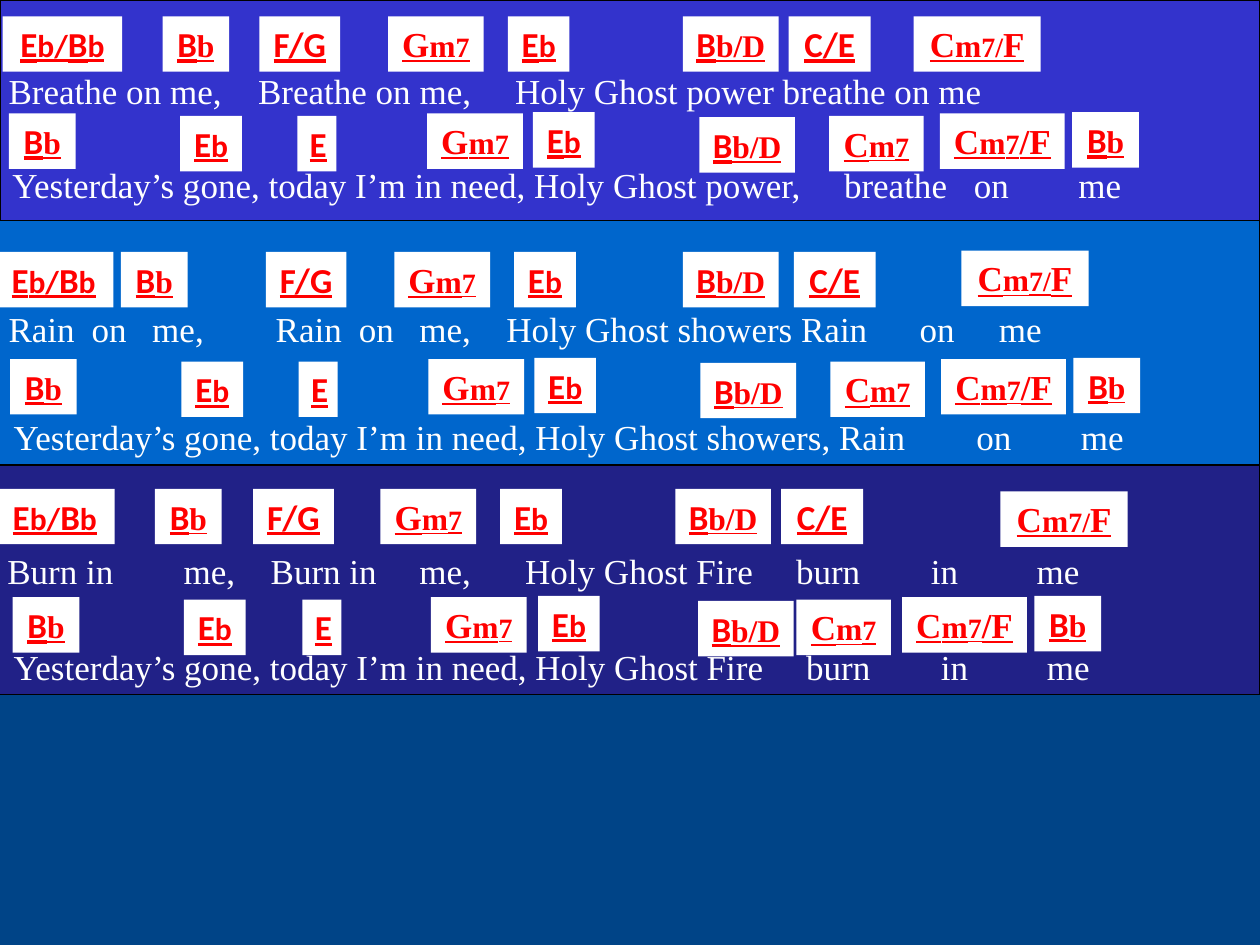
from lxml.etree import SubElement
from pptx import Presentation
from pptx.dml.color import RGBColor
from pptx.enum.shapes import MSO_SHAPE
from pptx.enum.text import MSO_ANCHOR, MSO_AUTO_SIZE, PP_ALIGN
from pptx.oxml.ns import qn
from pptx.util import Inches, Pt

COLS, ROWS = 1000, 750
SANS, SERIF = "Calibri", "Times New Roman"
HUES = {
    "light": "0066CC", "dark": "004487",
    "breathe": "3333CC", "rain": "0066CC", "burn": "212187",
    "edge": "000000", "lyric": "FFFFFF", "card": "FFFFFF", "chord": "FF0000",
}
MINOR = [("C", 20, SERIF), ("m", 18, SERIF)]
CHORDS = {
    "Eb/Bb": (95, [("E", 20, SANS), ("b/", 18, SANS), ("B", 20, SANS), ("b", 18, SANS)]),
    "Bb": (53, [("B", 20, SANS), ("b", 18, SERIF)]),
    "F/G": (64, [("F/G", 20, SANS)]),
    "Gm7": (76, [("G", 20, SERIF), ("m", 18, SERIF), ("7", 16, SERIF)]),
    "Eb": (49, [("E", 20, SANS), ("b", 18, SANS)]),
    "E": (31, [("E", 20, SANS)]),
    "Bb/D": (76, [("B", 20, SANS), ("b/D", 18, SERIF)]),
    "C/E": (65, [("C/E", 20, SANS)]),
    "Cm7": (75, MINOR + [("7", 16, SERIF)]),
    "Cm7/F high": (101, MINOR + [("7/", 16, SERIF), ("F", 20, SERIF)]),
    "Cm7/F low": (99, MINOR + [("7", 16, SERIF), ("/F", 20, SERIF)]),
}
HIGH = ["Eb/Bb", "Bb", "F/G", "Gm7", "Eb", "Bb/D", "C/E", "Cm7/F high"]
LOW = ["Bb", "Eb", "E", "Gm7", "Eb", "Bb/D", "Cm7", "Cm7/F low", "Bb"]
DROPS = [0, 2, 2, 0, -1, 3, 2, 0, -1]

BANDS = [("burn", -3, 369, 1003, 182), ("rain", -3, 175, 1003, 194), ("breathe", 0, 0, 1000, 175)]
LYRICS = [
    (-3, 50, 1000, "Breathe on me,\tBreathe on me,\tHoly Ghost power breathe on me", [205, 409]),
    (0, 125, 958, "Yesterday’s gone, today I’m in need, Holy Ghost power,\tbreathe\ton\tme",
     [670, 773, 856]),
    (-3, 239, 1000, "Rain\ton\tme,\tRain\ton\tme,\tHoly Ghost showers Rain\ton\tme",
     [73, 121, 219, 285, 333, 402, 730, 793]),
    (1, 325, 958, "Yesterday’s gone, today I’m in need, Holy Ghost showers, Rain\ton\tme",
     [775, 858]),
    (-4, 431, 1000, "Burn in\tme,\tBurn in\tme,\tHoly Ghost Fire\tburn\tin\tme",
     [146, 215, 333, 417, 632, 739, 823]),
    (1, 507, 958, "Yesterday’s gone, today I’m in need, Holy Ghost Fire\tburn\tin\tme",
     [640, 747, 831]),
]
VERSES = [
    (13, 13, [2, 129, 206, 308, 403, 542, 626, 725],
     90, [7, 143, 236, 339, 423, 555, 658, 746, 851]),
    (200, 199, [-5, 96, 211, 313, 408, 542, 630, 763],
     285, [8, 144, 237, 340, 424, 556, 659, 747, 852]),
    (388, 390, [-4, 123, 201, 302, 397, 536, 620, 794],
     474, [10, 146, 240, 342, 427, 554, 632, 716, 821]),
]


class Sheet:
    def __init__(self, deck):
        self.wide, self.high = deck.slide_width, deck.slide_height
        self.slide = deck.slides.add_slide(deck.slide_layouts[6])

    def hue(self, name):
        return RGBColor.from_string(HUES[name])

    def across(self, cols):
        return round(self.wide * cols / COLS)

    def area(self, x, y, w, h):
        down = self.high / ROWS
        return self.across(x), round(y * down), self.across(w), round(h * down)

    def back(self):
        fill = self.slide.background.fill
        fill.gradient()
        for stop, name, place in zip(fill.gradient_stops, ("light", "dark"), (0, 1)):
            stop.color.rgb = self.hue(name)
            stop.position = place
        grad = self.slide.element.find(".//" + qn("a:gradFill"))
        grad.remove(grad.find(qn("a:lin")))
        focus = SubElement(grad, qn("a:path"), path="rect")
        SubElement(focus, qn("a:fillToRect"), r="100000", b="100000")

    def rect(self, box, fill):
        shape = self.slide.shapes.add_shape(MSO_SHAPE.RECTANGLE, *self.area(*box))
        shape.shadow.inherit = False
        shape.fill.solid()
        shape.fill.fore_color.rgb = self.hue(fill)
        return shape

    def band(self, name, *box):
        line = self.rect(box, name).line
        line.color.rgb = self.hue("edge")
        line.width = Pt(0.75)

    def para(self, shape, wrap, tint):
        frame = shape.text_frame
        frame.word_wrap = wrap
        frame.auto_size = MSO_AUTO_SIZE.SHAPE_TO_FIT_TEXT
        frame.vertical_anchor = MSO_ANCHOR.TOP
        para = frame.paragraphs[0]
        gap = SubElement(para._p.get_or_add_pPr(), qn("a:spcBef"))
        SubElement(gap, qn("a:spcPct"), val="50000")
        para.font.color.rgb = self.hue(tint)
        return para

    def lyric(self, x, y, w, text, stops):
        box = self.slide.shapes.add_textbox(*self.area(x, y, w, 44))
        para = self.para(box, True, "lyric")
        para.font.size, para.font.name = Pt(20), SERIF
        para.add_run().text = text
        tabs = para._p.pPr.find(qn("a:defRPr"))
        tabs.addprevious(SubElement(para._p.pPr, qn("a:tabLst")))
        start = self.across(x) + box.text_frame.margin_left
        for stop in stops:
            SubElement(tabs.getprevious(), qn("a:tab"), pos=str(self.across(stop) - start), algn="l")

    def chord(self, name, x, y):
        width, marks = CHORDS[name]
        card = self.rect((x, y, width, 44), "card")
        card.line.fill.background()
        para = self.para(card, False, "chord")
        para.alignment = PP_ALIGN.CENTER
        para.font.bold = para.font.underline = True
        for text, size, face in marks:
            run = para.add_run()
            run.text = text
            run.font.size, run.font.name = Pt(size), face


def main():
    deck = Presentation()
    deck.slide_width, deck.slide_height = Inches(10), Inches(7.5)
    sheet = Sheet(deck)
    sheet.back()
    for band in BANDS:
        sheet.band(*band)
    for lyric in LYRICS:
        sheet.lyric(*lyric)
    for top, end, highs, base, lows in VERSES:
        for name, x in zip(HIGH, highs):
            sheet.chord(name, x, end if name == HIGH[-1] else top)
        for name, x, drop in zip(LOW, lows, DROPS):
            sheet.chord(name, x, base + drop)
    deck.save("out.pptx")


if __name__ == "__main__":
    main()
